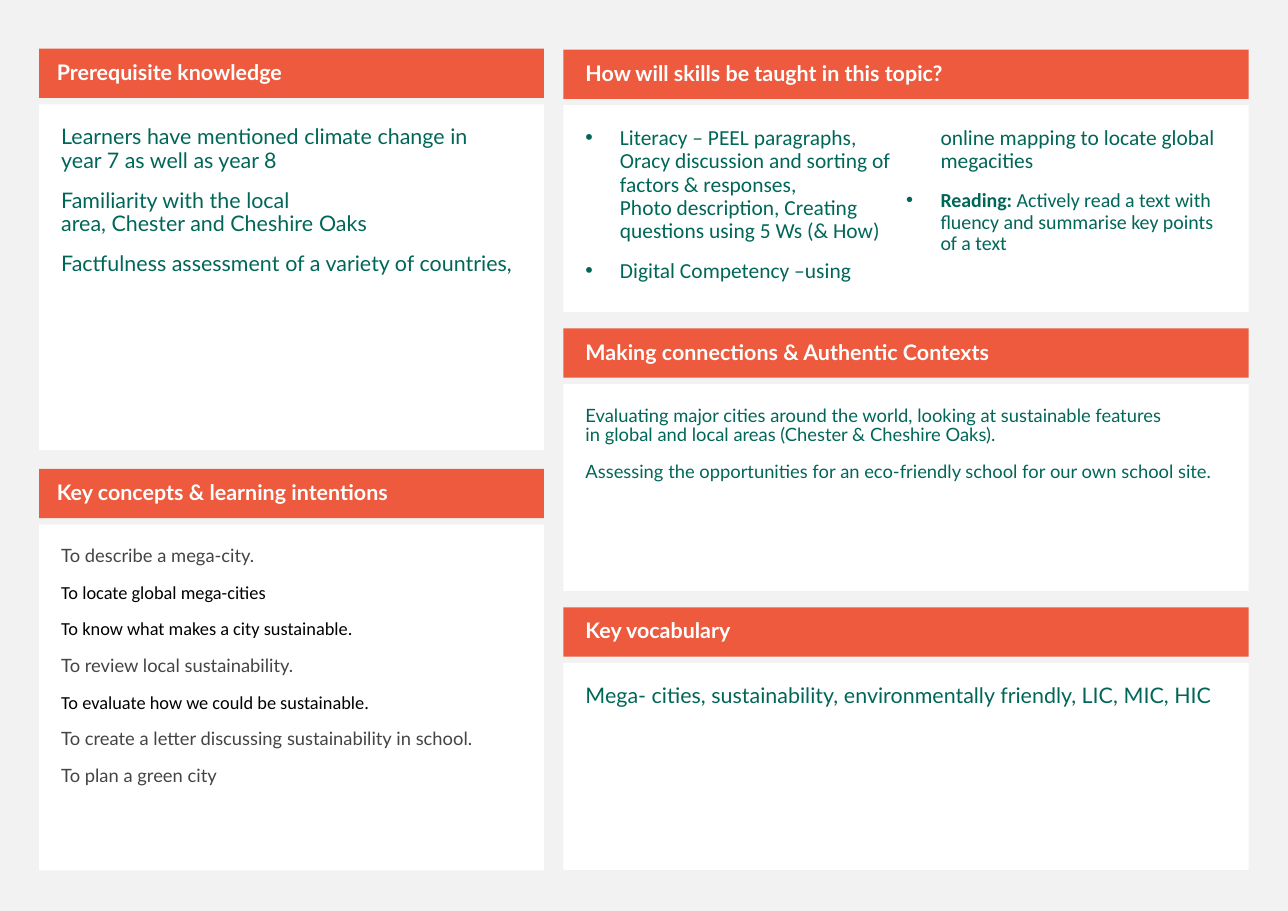
from pptx import Presentation
from pptx.dml.color import RGBColor
from pptx.enum.shapes import MSO_SHAPE as Kind
from pptx.enum.text import MSO_ANCHOR as Anchor, PP_ALIGN as Align
from pptx.oxml.ns import qn
from pptx.util import Pt
from lxml.etree import SubElement as Sub

RED, WHITE, GREEN, GREY, BLACK = "ED5A3E", "FFFFFF", "006758", "444444", "000000"
HEAD, GAP = 32.2, 4.2  # height of a heading bar, space below it
PAD = 14.4
SKILLS = "How will skills be taught in this topic?"

# Heading, text size, font, colour, paragraphs; "~" stands for a no-break space
LEFT = [
    ("Prerequisite knowledge", 14, "Lato", GREEN, [
        "Learners~have mentioned climate change in year~7 as well as year~8",
        "Familiarity with the local area,~Chester~and~Cheshire Oaks",
        "Factfulness~assessment of a variety~of countries,"]),
    ("Key concepts & learning intentions", 12, "Lato", GREY, [
        "To describe a mega-city.",
        ("To locate global mega-cities", "Calibri", BLACK),
        ("To know what makes a city sustainable.", "Calibri", BLACK),
        "To review local sustainability.",
        ("To evaluate how we could be sustainable.", "Calibri", BLACK),
        "To create a letter discussing sustainability in school.",
        "To plan a~green city"]),
]
RIGHT = [
    (SKILLS, 14, "Calibri", GREEN, []),
    ("Making connections & Authentic Contexts", 12, "Lato", GREEN, [
        "Evaluating~major cities around~the world, looking at~sustainable~features "
        "in~global and local areas~(Chester~& Cheshire Oaks).",
        "Assessing the~opportunities~for an~eco-friendly~school~for our~own "
        "school~site."]),
    ("Key vocabulary", 14, "Lato", GREEN, [
        "Mega- cities, sustainability, environmentally friendly,~LIC, MIC,~HIC"]),
]
POINTS = [
    "Literacy – PEEL paragraphs, Oracy discussion and sorting of factors & responses, "
    "Photo~description, Creating questions using 5~Ws~(& How)~",
    "Digital Competency –using online mapping to locate global megacities~",
]


def tint(code):
    return RGBColor.from_string(code)


def write(frame, text, size=14, font="Lato", color=GREEN, bold=False,
          bullet=False, para=None):
    """Add text as a new paragraph, or as a run of the given one."""
    if para is None:
        para = frame.paragraphs[0]
        if para.runs:
            para = frame.add_paragraph()
        para.alignment = Align.LEFT
        para.line_spacing = 0.9
        para.space_before = Pt(11)
        if bullet:
            props = para._p.get_or_add_pPr()
            props.set("marL", str(Pt(22.5)))
            props.set("indent", str(-Pt(22.5)))
            Sub(props, qn("a:buFont")).set("typeface", "Arial")
            Sub(props, qn("a:buChar")).set("char", "•")
    run = para.add_run()
    run.text = text.replace("~", chr(160))
    face = run.font
    face.size, face.name, face.bold = Pt(size), font, bold
    face.color.rgb = tint(color)
    return para


def block(slide, x, y, w, h, fill, pads, anchor=Anchor.TOP):
    """Draw a filled box and return its text frame."""
    box = slide.shapes.add_shape(Kind.RECTANGLE, Pt(x), Pt(y), Pt(w), Pt(h))
    box.shadow.inherit = False
    box.fill.solid()
    box.fill.fore_color.rgb = tint(fill)
    box.line.fill.background()
    frame = box.text_frame
    frame.word_wrap = True
    frame.vertical_anchor = anchor
    (frame.margin_left, frame.margin_top,
     frame.margin_right, frame.margin_bottom) = map(Pt, pads)
    return frame


def panel(slide, x, y, w, h, inset, data):
    """Place a heading bar with its text box below."""
    title, size, font, color, paras = data
    bar = block(slide, x, y, w, HEAD, RED, (inset, 3.6, 7.2, 3.6), Anchor.MIDDLE)
    write(bar, title, color=WHITE, bold=True)
    top = HEAD + GAP
    frame = block(slide, x, y + top, w, h - top, WHITE, [PAD] * 4)
    for item in paras:
        if isinstance(item, tuple):
            text, face, ink = item
        else:
            text, face, ink = item, font, color
        write(frame, text, size, face, ink)
    if title == SKILLS:
        skills(frame, font)


def skills(frame, font):
    """Fill the two-column list of skills."""
    frame._txBody.bodyPr.set("numCol", "2")
    for text in POINTS:
        write(frame, text, font=font, bullet=True)
    para = write(frame, "Reading:~", 13, font, bold=True, bullet=True)
    write(frame, "Actively read a text with fluency and~summarise~key points of a~text~",
          13, font, para=para)


def column(slide, x, y, w, h, step, inset, panels):
    """Stack panels at an equal step."""
    for i, data in enumerate(panels):
        panel(slide, x, y + i * step, w, h, inset, data)


def main():
    deck = Presentation()
    deck.slide_width, deck.slide_height = Pt(841.68), Pt(595.44)
    slide = deck.slides.add_slide(deck.slide_layouts[6])
    back = slide.background.fill
    back.solid()
    back.fore_color.rgb = tint("F2F2F2")
    # Left and right columns
    column(slide, 25.6, 31.8, 329.8, 262.4, 274.7, 11.5, LEFT)
    column(slide, 368.2, 32.4, 447.8, 171.6, 182.3, PAD, RIGHT)
    deck.save("out.pptx")


if __name__ == "__main__":
    main()
